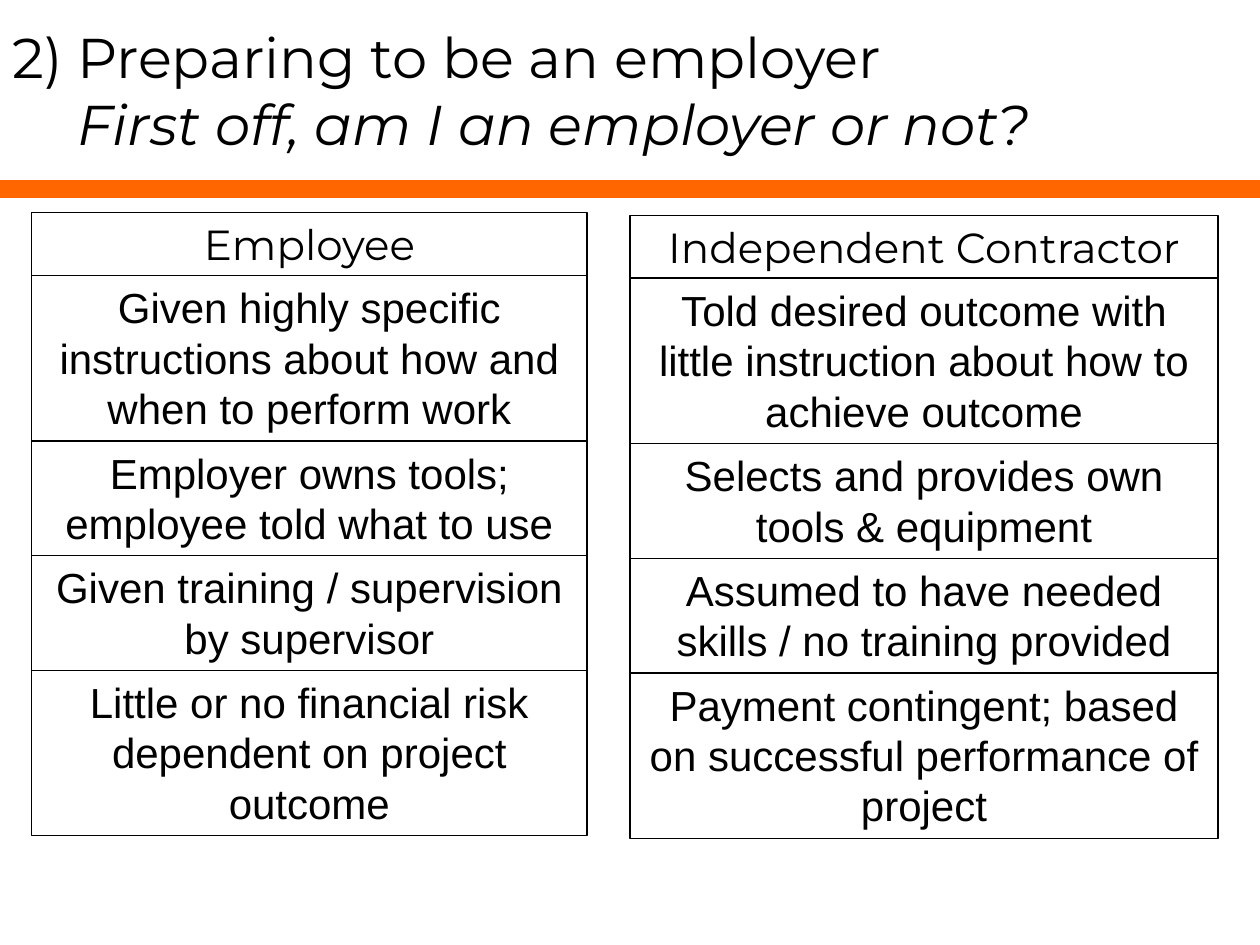
from lxml.etree import SubElement
from pptx import Presentation
from pptx.dml.color import RGBColor
from pptx.enum.shapes import MSO_CONNECTOR, MSO_SHAPE
from pptx.enum.text import MSO_ANCHOR, MSO_AUTO_SIZE, PP_ALIGN
from pptx.oxml.ns import qn
from pptx.util import Pt

BLACK = RGBColor(0x00, 0x00, 0x00)
ORANGE = RGBColor(0xFF, 0x66, 0x00)
HEADING_FONT = "Montserrat"
BODY_FONT = "Arial"
ROW_HEIGHTS = [36, 94.5, 65.5, 65.5, 94.5]

EMPLOYEE = [
    "Employee",
    "Given highly specific instructions about how and when to perform work",
    "Employer owns tools; employee told what to use",
    "Given training / supervision by supervisor",
    "Little or no financial risk dependent on project outcome",
]
CONTRACTOR = [
    "Independent Contractor",
    "Told desired outcome with little instruction about how to achieve outcome",
    "Selects and provides own tools & equipment",
    "Assumed to have needed skills / no training provided",
    "Payment contingent; based on successful performance of project",
]


class ComparisonSlide:
    title_size = Pt(32)
    cell_size = Pt(24)

    def __init__(self, presentation):
        self.slide = presentation.slides.add_slide(presentation.slide_layouts[5])

    def format_run(self, run, font_name, size):
        run.font.name = font_name
        run.font.size = size
        run.font.color.rgb = BLACK

    def title(self, number, heading, question):
        shape = self.slide.shapes.title
        shape.left, shape.top, shape.width, shape.height = Pt(0), Pt(6), Pt(720), Pt(90)
        text_frame = shape.text_frame
        text_frame.word_wrap = True
        text_frame.auto_size = MSO_AUTO_SIZE.NONE
        text_frame.vertical_anchor = MSO_ANCHOR.MIDDLE
        paragraph = text_frame.paragraphs[0]
        paragraph.alignment = PP_ALIGN.LEFT
        tab_list = SubElement(paragraph._p.get_or_add_pPr(), qn("a:tabLst"))
        SubElement(tab_list, qn("a:tab"), pos=str(Pt(37)), algn="l")
        paragraph.add_run().text = f"{number}\t{heading}"
        paragraph.add_line_break()
        question_run = paragraph.add_run()
        question_run.text = f"\t{question}"
        question_run.font.italic = True
        for run in paragraph.runs:
            self.format_run(run, HEADING_FONT, self.title_size)

    def rule(self, top, width):
        connector = self.slide.shapes.add_connector(
            MSO_CONNECTOR.STRAIGHT, Pt(0), Pt(top), Pt(720), Pt(top))
        connector.line.color.rgb = ORANGE
        connector.line.width = Pt(width)
        SubElement(connector._element.spPr, qn("a:effectLst"))

    def cell(self, text, left, top, width, height, font_name):
        shape = self.slide.shapes.add_shape(
            MSO_SHAPE.RECTANGLE, Pt(left), Pt(top), Pt(width), Pt(height))
        shape.shadow.inherit = False
        shape.fill.background()
        shape.line.color.rgb = BLACK
        shape.line.width = Pt(0.75)
        text_frame = shape.text_frame
        text_frame.text = text
        text_frame.word_wrap = True
        text_frame.auto_size = MSO_AUTO_SIZE.SHAPE_TO_FIT_TEXT
        text_frame.vertical_anchor = MSO_ANCHOR.TOP
        paragraph = text_frame.paragraphs[0]
        paragraph.alignment = PP_ALIGN.CENTER
        self.format_run(paragraph.runs[0], font_name, self.cell_size)

    def column(self, texts, left, top, width):
        for index, (text, height) in enumerate(zip(texts, ROW_HEIGHTS)):
            font_name = BODY_FONT if index else HEADING_FONT
            self.cell(text, left, top, width, height, font_name)
            top += height


def main():
    presentation = Presentation()
    presentation.slide_width = Pt(720)
    presentation.slide_height = Pt(540)
    comparison = ComparisonSlide(presentation)
    comparison.title("2)", "Preparing to be an employer", "First off, am I an employer or not?")
    comparison.rule(108, 10)
    comparison.column(EMPLOYEE, 18, 121.5, 317.5)
    comparison.column(CONTRACTOR, 360, 123, 336)
    presentation.save("out.pptx")


if __name__ == "__main__":
    main()
